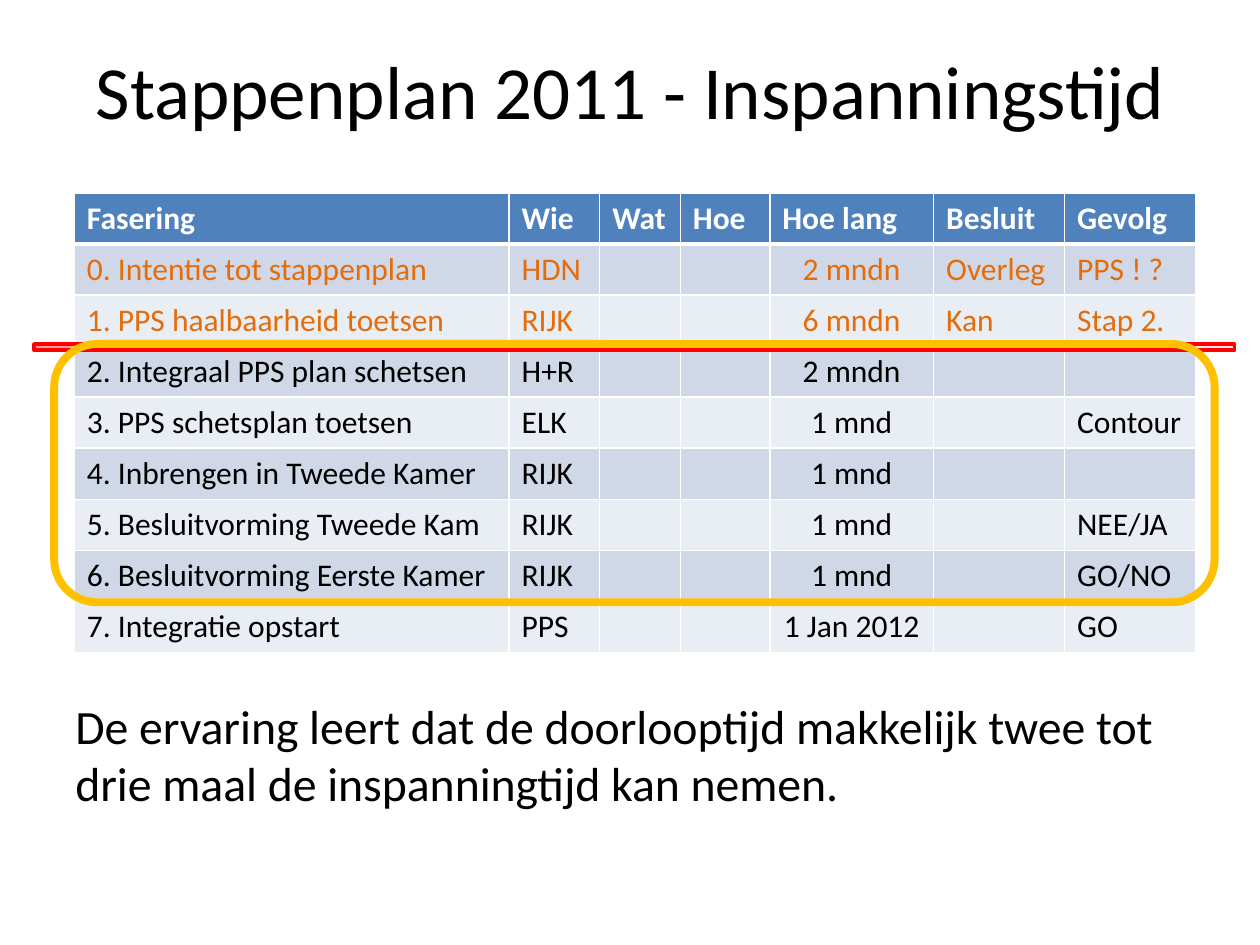
import pptx
import pptx.dml.color
import pptx.enum.shapes
import pptx.enum.text
import pptx.oxml
import pptx.oxml.ns
import pptx.util

RGBColor = pptx.dml.color.RGBColor
WHITE = RGBColor(0xFF, 0xFF, 0xFF)
BLACK = RGBColor(0x00, 0x00, 0x00)
ORANGE = RGBColor(0xE4, 0x6C, 0x0A)
HEADER_BLUE = RGBColor(0x4F, 0x81, 0xBD)
BAND_DARK = RGBColor(0xD0, 0xD8, 0xE8)
BAND_LIGHT = RGBColor(0xE9, 0xED, 0xF4)
RED = RGBColor(0xFF, 0x00, 0x00)
PINK_DARK = RGBColor(0xFF, 0xA0, 0xA0)
PINK_LIGHT = RGBColor(0xFF, 0xE3, 0xE3)
GOLD = RGBColor(0xFF, 0xC0, 0x00)
FONT = "Calibri"
ALIGN = pptx.enum.text.PP_ALIGN
SHAPES = pptx.enum.shapes.MSO_SHAPE

COLUMN_WIDTHS = [3.45, 0.72, 0.64, 0.71, 1.3, 1.04, 1.04]
DURATION_COLUMN = 4
DONE_ROWS = (1, 2)
ROWS = [
    ["Fasering", "Wie", "Wat", "Hoe", "Hoe lang", "Besluit", "Gevolg"],
    ["0. Intentie tot stappenplan", "HDN", "", "", "2 mndn", "Overleg", "PPS ! ?"],
    ["1. PPS haalbaarheid toetsen", "RIJK", "", "", "6 mndn", "Kan", "Stap 2."],
    ["2. Integraal PPS plan schetsen", "H+R", "", "", "2 mndn", "", ""],
    ["3. PPS schetsplan toetsen", "ELK", "", "", "1 mnd", "", "Contour"],
    ["4. Inbrengen in Tweede Kamer", "RIJK", "", "", "1 mnd", "", ""],
    ["5. Besluitvorming Tweede Kam", "RIJK", "", "", "1 mnd", "", "NEE/JA"],
    ["6. Besluitvorming Eerste Kamer", "RIJK", "", "", "1 mnd", "", "GO/NO"],
    ["7. Integratie opstart", "PPS", "", "", "1 Jan 2012", "", "GO"],
]


def inches(box):
    """Convert a box of left, top, width and height to lengths."""
    return [pptx.util.Inches(value) for value in box]


def write(text_frame, text, size, color, align=ALIGN.LEFT, bold=False):
    """Fill a text frame with one formatted paragraph."""
    text_frame.text = text
    paragraph = text_frame.paragraphs[0]
    paragraph.alignment = align
    paragraph.font.size = pptx.util.Pt(size)
    for run in paragraph.runs:
        run.font.name = FONT
        run.font.size = pptx.util.Pt(size)
        run.font.color.rgb = color
        run.font.bold = bold


def add_title(slide, box):
    """Place the title in its placeholder."""
    title = slide.shapes.title
    title.left, title.top, title.width, title.height = inches(box)
    write(title.text_frame, "Stappenplan 2011 - Inspanningstijd", 42.9, BLACK, ALIGN.CENTER)
    title.text_frame.auto_size = pptx.enum.text.MSO_AUTO_SIZE.NONE
    title.text_frame.vertical_anchor = pptx.enum.text.MSO_ANCHOR.TOP


def set_borders(cell, bottom_width):
    """Draw white borders round a cell."""
    properties = cell._tc.get_or_add_tcPr()
    widths = [("lnL", 1), ("lnR", 1), ("lnT", 1), ("lnB", bottom_width)]
    for index, (side, width) in enumerate(widths):
        border = pptx.oxml.parse_xml(
            f'<a:{side} {pptx.oxml.ns.nsdecls("a")} w="{pptx.util.Pt(width)}">'
            f'<a:solidFill><a:srgbClr val="{WHITE}"/></a:solidFill></a:{side}>'
        )
        properties.insert(index, border)


def add_plan_table(slide, box):
    """Add the table of phases, with a header and banded rows."""
    frame = slide.shapes.add_table(len(ROWS), len(COLUMN_WIDTHS), *inches(box))
    table = frame.table
    for column, width in zip(table.columns, COLUMN_WIDTHS):
        column.width = pptx.util.Inches(width)
    for row_index, values in enumerate(ROWS):
        header = row_index == 0
        fill = HEADER_BLUE if header else BAND_DARK if row_index % 2 else BAND_LIGHT
        color = WHITE if header else ORANGE if row_index in DONE_ROWS else BLACK
        for column_index, value in enumerate(values):
            cell = table.cell(row_index, column_index)
            cell.fill.solid()
            cell.fill.fore_color.rgb = fill
            centred = column_index == DURATION_COLUMN and not header
            align = ALIGN.CENTER if centred else ALIGN.LEFT
            write(cell.text_frame, value, 18, color, align, header)
            set_borders(cell, 3 if row_index == 0 else 1)


def add_outlined_shape(slide, kind, box, color, width):
    """Add an unfilled shape with a coloured outline."""
    shape = slide.shapes.add_shape(kind, *inches(box))
    shape.shadow.inherit = False
    shape.fill.background()
    shape.line.color.rgb = color
    shape.line.width = pptx.util.Pt(width)
    return shape


def add_divider(slide, box):
    """Add the thin red bar below the finished phases."""
    bar = add_outlined_shape(slide, SHAPES.RECTANGLE, box, RED, 2)
    bar.fill.gradient()
    bar.fill.gradient_angle = 0
    for stop, color in zip(bar.fill.gradient_stops, (PINK_DARK, PINK_LIGHT)):
        stop.color.rgb = color


def add_remark(slide, box):
    """Add the closing remark below the table."""
    text_frame = slide.shapes.add_textbox(*inches(box)).text_frame
    text_frame.word_wrap = True
    remark = ("De ervaring leert dat de doorlooptijd makkelijk twee tot "
              "drie maal de inspanningtijd kan nemen.")
    write(text_frame, remark, 27.3, BLACK)


def main():
    """Build and save the slide."""
    presentation = pptx.Presentation()
    presentation.slide_width = pptx.util.Inches(10)
    presentation.slide_height = pptx.util.Inches(7.5)
    slide = presentation.slides.add_slide(presentation.slide_layouts[5])
    add_plan_table(slide, (0.59, 1.53, 8.9, 3.65))
    add_title(slide, (0.5, 0.3, 9, 1.25))
    add_divider(slide, (0.27, 2.73, 9.53, 0.05))
    add_outlined_shape(slide, SHAPES.ROUNDED_RECTANGLE, (0.43, 2.73, 9.21, 2.05), GOLD, 4.5)
    add_remark(slide, (0.5, 5.48, 9, 1.25))
    presentation.save("out.pptx")


if __name__ == "__main__":
    main()
